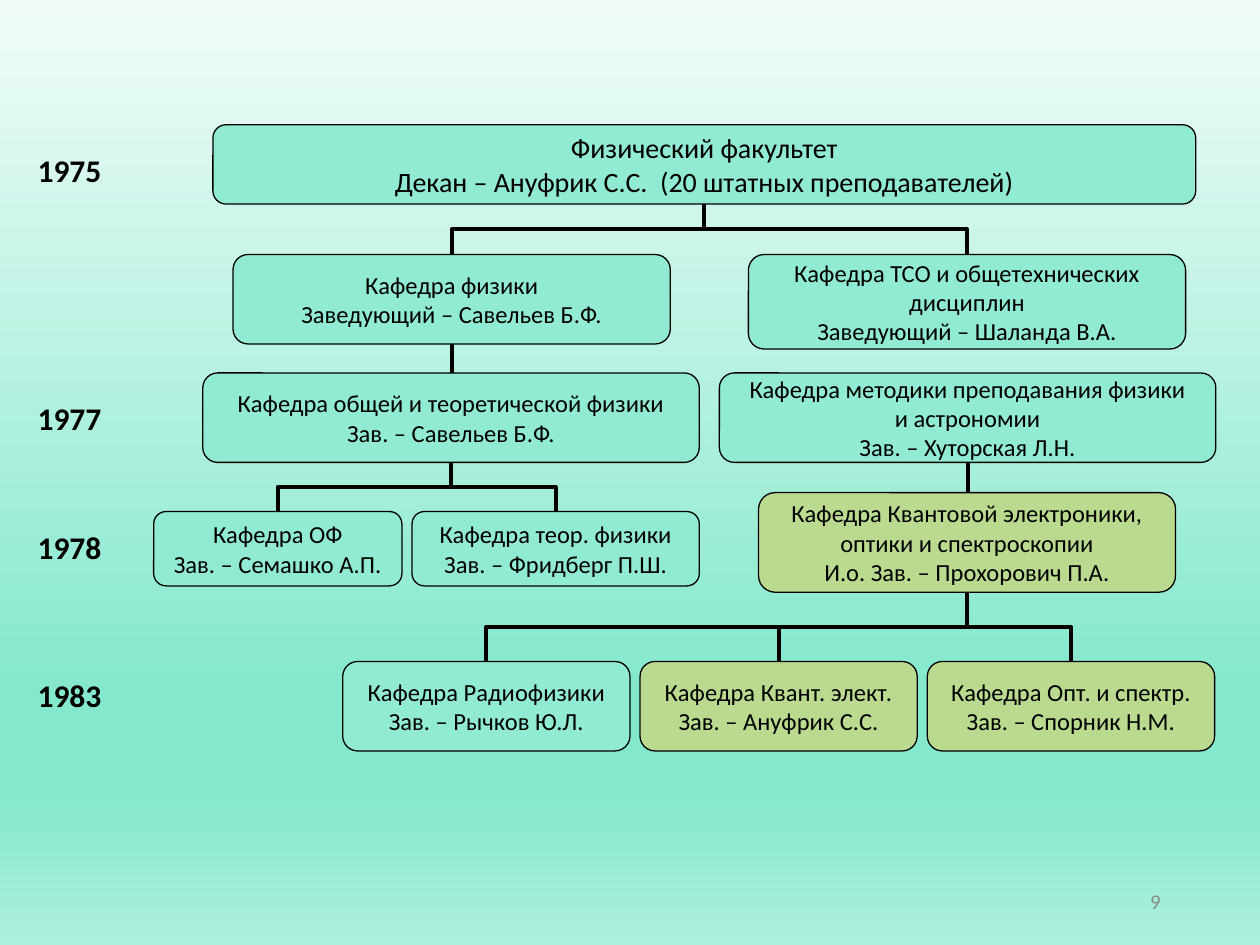
"""Build the organisation chart of the physics faculty, 1975 to 1983."""
from copy import deepcopy

from pptx import Presentation
from pptx.dml.color import RGBColor
from pptx.enum.shapes import MSO_CONNECTOR, MSO_SHAPE
from pptx.enum.text import MSO_ANCHOR, PP_ALIGN
from pptx.oxml.ns import qn
from pptx.util import Inches, Pt
from lxml.etree import SubElement

COLORS = {
    "mint": "91EAD2", "olive": "B9DA8F", "ink": "000000", "gray": "8C8C8C",
    "pale": "F1FCF9", "deep": "83E8CC", "soft": "ACEFDD",
}


def tint(name):
    """Return the named colour."""
    return RGBColor.from_string(COLORS[name])


def write(shape, text, size=14, color="ink", bold=False, align=PP_ALIGN.CENTER,
          anchor=MSO_ANCHOR.MIDDLE, wrap=False):
    """Put text in a shape, one paragraph a line."""
    frame = shape.text_frame
    frame.text = text
    frame.word_wrap = wrap
    frame.vertical_anchor = anchor
    for para in frame.paragraphs:
        para.alignment = align
        font = para.font
        font.name, font.size, font.bold = "Calibri", Pt(size), bold
        font.color.rgb = tint(color)


deck = Presentation()
deck.slide_width, deck.slide_height = Inches(10), Inches(7.5)
slide = deck.slides.add_slide(deck.slide_layouts[6])
shapes = slide.shapes

fill = slide.background.fill
fill.gradient()
fill.gradient_angle = 270
stops = slide.element.find(".//" + qn("a:gsLst"))
for _ in range(2):
    stops.append(deepcopy(stops[0]))
shades = [(0, "pale"), (0.74, "deep"), (0.83, "deep"), (1, "soft")]
for stop, (place, name) in zip(fill.gradient_stops, shades):
    stop.position = place
    stop.color.rgb = tint(name)

units = {
    "faculty": (1.69, 0.99, 7.8, 0.63, "mint",
                "Физический факультет\nДекан – Ануфрик С.С.  (20 штатных преподавателей)"),
    "physics": (1.85, 2.02, 3.47, 0.71, "mint",
                "Кафедра физики\nЗаведующий – Савельев Б.Ф."),
    "technics": (5.94, 2.02, 3.47, 0.75, "mint",
                 "Кафедра ТСО и общетехнических\nдисциплин\nЗаведующий – Шаланда В.А."),
    "general": (1.61, 2.96, 3.94, 0.71, "mint",
                "Кафедра общей и теоретической физики\nЗав. – Савельев Б.Ф."),
    "methods": (5.71, 2.96, 3.94, 0.71, "mint",
                "Кафедра методики преподавания физики\nи астрономии\nЗав. – Хуторская Л.Н."),
    "quantum": (6.02, 3.91, 3.31, 0.79, "olive",
                "Кафедра Квантовой электроники,\nоптики и спектроскопии\nИ.о. Зав. – Прохорович П.А."),
    "basic": (1.22, 4.06, 1.97, 0.59, "mint",
              "Кафедра ОФ\nЗав. – Семашко А.П."),
    "theory": (3.27, 4.06, 2.28, 0.59, "mint",
               "Кафедра теор. физики\nЗав. – Фридберг П.Ш."),
    "radio": (2.72, 5.25, 2.28, 0.71, "mint",
              "Кафедра Радиофизики\nЗав. – Рычков Ю.Л."),
    "devices": (5.08, 5.25, 2.2, 0.71, "olive",
                "Кафедра Квант. элект.\nЗав. – Ануфрик С.С."),
    "optics": (7.36, 5.25, 2.28, 0.71, "olive",
               "Кафедра Опт. и спектр.\nЗав. – Спорник Н.М."),
}
links = {
    "faculty": ["physics", "technics"],
    "physics": ["general"],
    "general": ["basic", "theory"],
    "methods": ["quantum"],
    "quantum": ["radio", "devices", "optics"],
}

for parent, children in links.items():
    left, top, width, height = units[parent][:4]
    start, base = left + width / 2, top + height
    for child in children:
        left, top, width = units[child][:3]
        end = left + width / 2
        drop, shift = top - base, start - end
        if abs(shift) < 0.02:
            line = shapes.add_connector(MSO_CONNECTOR.STRAIGHT, Inches(start),
                                        Inches(base), Inches(start), Inches(top))
        else:
            mid, level = (start + end) / 2, (base + top) / 2
            line = shapes.add_connector(
                MSO_CONNECTOR.ELBOW,
                Inches(mid - drop / 2), Inches(level - shift / 2),
                Inches(mid + drop / 2), Inches(level + shift / 2))
            line.rotation = 90
        line.line.color.rgb = tint("ink")
        line.line.width = Pt(2.25)
        SubElement(line.element.spPr, qn("a:effectLst"))

for name, (left, top, width, height, color, text) in units.items():
    box = shapes.add_shape(MSO_SHAPE.ROUNDED_RECTANGLE, Inches(left), Inches(top),
                           Inches(width), Inches(height))
    box.shadow.inherit = False
    box.fill.solid()
    box.fill.fore_color.rgb = tint(color)
    box.line.color.rgb = tint("ink")
    box.line.width = Pt(0.75)
    write(box, text, size=16 if name == "faculty" else 14)

for year, top in [("1975", 1.15), ("1977", 3.12), ("1978", 4.14), ("1983", 5.32)]:
    label = shapes.add_textbox(Inches(0.2), Inches(top), Inches(1.02), Inches(0.4))
    write(label, year, size=18, bold=True, align=PP_ALIGN.LEFT,
          anchor=MSO_ANCHOR.TOP, wrap=True)

number = shapes.add_textbox(Inches(7.06), Inches(6.95), Inches(2.25), Inches(0.4))
write(number, "9", size=12, color="gray", align=PP_ALIGN.RIGHT, wrap=True)

deck.save("out.pptx")
